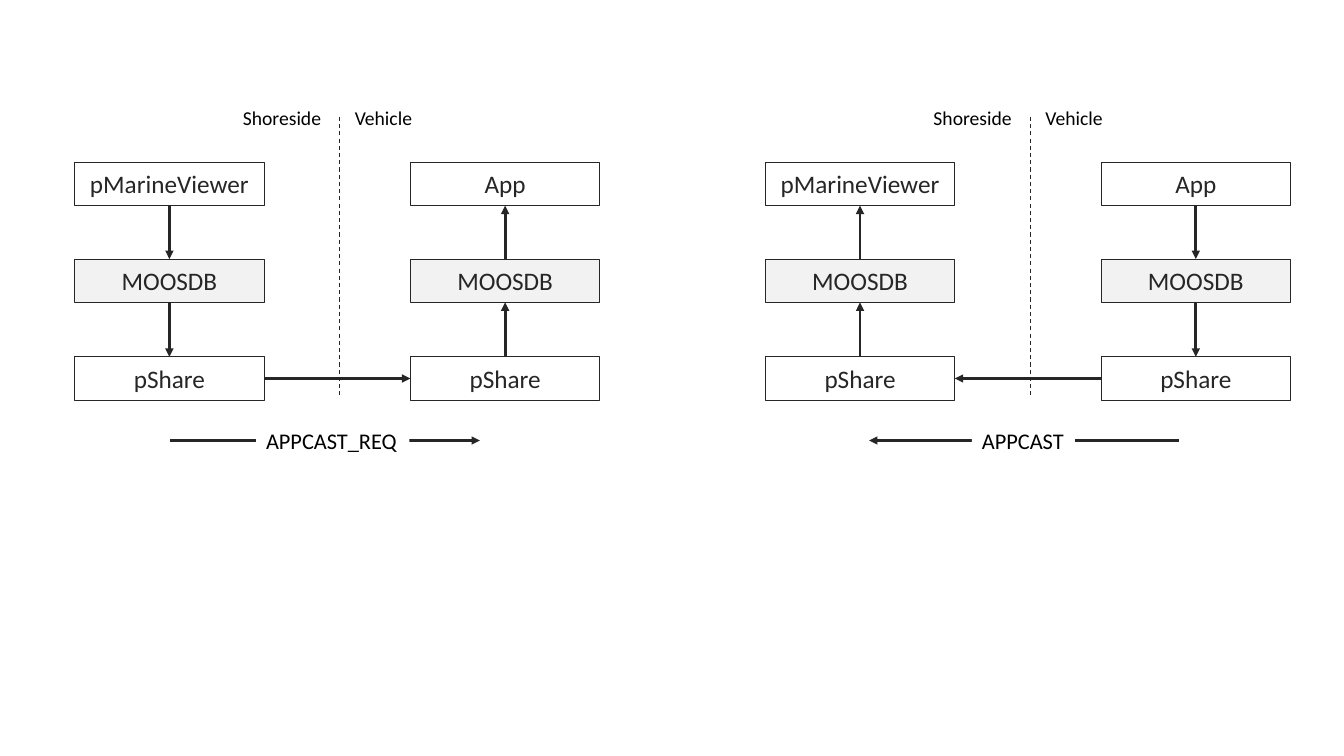
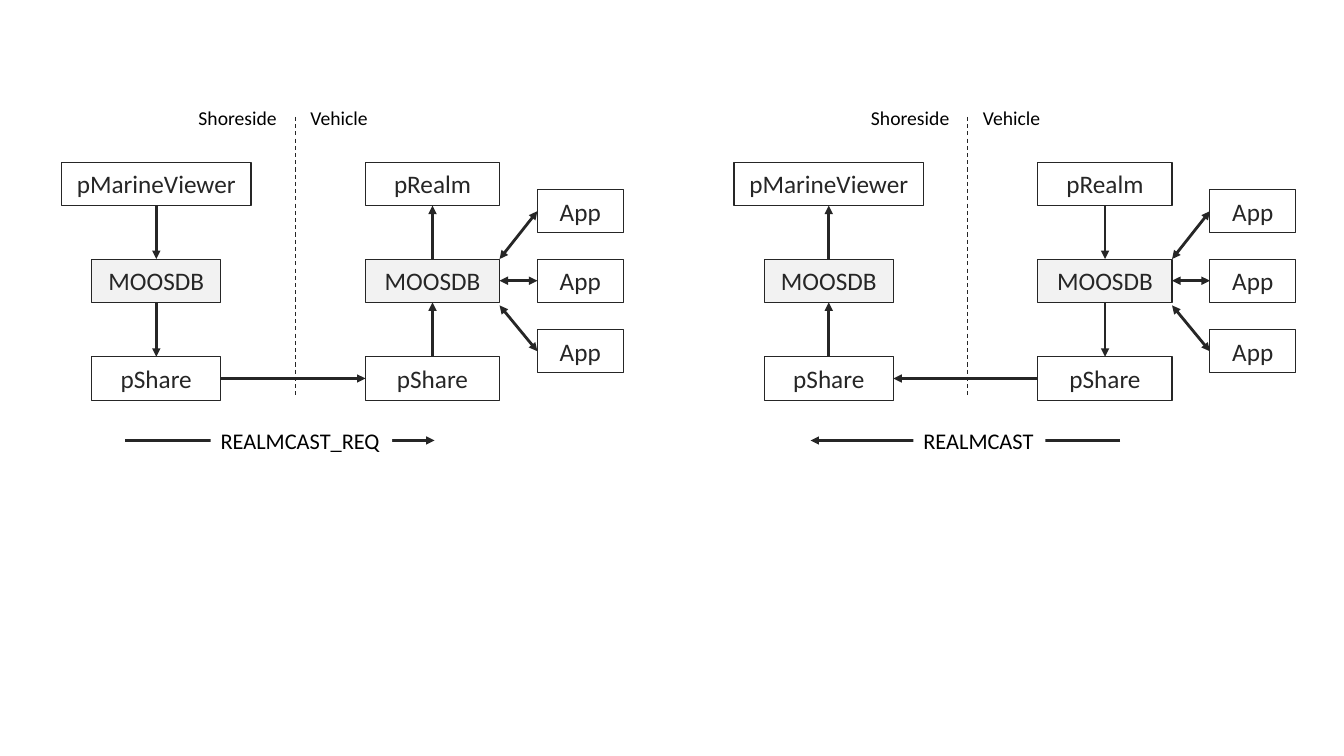
from pptx import Presentation
from pptx.dml.color import RGBColor
from pptx.enum.dml import MSO_LINE
from pptx.enum.shapes import MSO_CONNECTOR, MSO_SHAPE
from pptx.enum.text import MSO_ANCHOR, MSO_AUTO_SIZE, PP_ALIGN
from pptx.oxml.ns import qn
from pptx.util import Inches, Pt
from lxml import etree

INK = RGBColor(0x26, 0x26, 0x26)
BLACK = RGBColor(0, 0, 0)
GREY = RGBColor(0xF2, 0xF2, 0xF2)
WHITE = RGBColor(0xFF, 0xFF, 0xFF)
RECT = MSO_SHAPE.RECTANGLE
LINE = MSO_CONNECTOR.STRAIGHT
DASH = MSO_LINE.DASH
MIDDLE = MSO_ANCHOR.MIDDLE
CENTER = PP_ALIGN.CENTER
GROW = MSO_AUTO_SIZE.SHAPE_TO_FIT_TEXT
TOP, LEFT, BOTTOM, RIGHT = range(4)

ROWS = (1.61, 2.57, 3.54)
APPS = (1.88, 2.57, 3.27)
HEIGHT = 0.43
FLOW_Y = 4.37
FLOW_LEN = 3.07


class Deck:
    font = "Calibri"
    box_text = {"size": Pt(18), "color": INK}
    label_text = {"size": Pt(14), "color": BLACK}
    tag_text = {"size": Pt(16), "color": BLACK}

    def __init__(self):
        self.prs = Presentation()
        self.prs.slide_width = Inches(13.33)
        self.prs.slide_height = Inches(7.5)
        self.slide = None

    def page(self):
        self.slide = self.prs.slides.add_slide(self.prs.slide_layouts[6])

    def words(self, frame, text, style):
        para = frame.paragraphs[0]
        run = para.add_run()
        run.text = text
        run.font.color.rgb = style["color"]
        for key, value in {"name": self.font, "size": style["size"]}.items():
            setattr(run.font, key, value)
        return para

    def box(self, mid, top, width, text, fill=None):
        shape = self.slide.shapes.add_shape(
            RECT, Inches(mid - width / 2), Inches(top), Inches(width), Inches(HEIGHT))
        shape.shadow.inherit = False
        if fill is None:
            shape.fill.background()
        else:
            shape.fill.solid()
            shape.fill.fore_color.rgb = fill
        shape.line.color.rgb = INK
        shape.line.width = Pt(0.75)
        frame = shape.text_frame
        for key, value in {"vertical_anchor": MIDDLE, "word_wrap": True}.items():
            setattr(frame, key, value)
        self.words(frame, text, self.box_text).alignment = CENTER
        return shape

    def label(self, left, top, width, height, text, style, fill=None):
        shape = self.slide.shapes.add_textbox(
            Inches(left), Inches(top), Inches(width), Inches(height))
        if fill is not None:
            shape.fill.solid()
            shape.fill.fore_color.rgb = fill
        frame = shape.text_frame
        for key, value in {"word_wrap": False, "auto_size": GROW}.items():
            setattr(frame, key, value)
        self.words(frame, text, style)

    def line(self, start, end, weight=0, dash=None, heads=()):
        wire = self.slide.shapes.add_connector(
            LINE, *(Inches(value) for value in (*start, *end)))
        wire.line.color.rgb = INK
        wire.line.width = Pt(weight)
        if dash is not None:
            wire.line.dash_style = dash
        props = wire._element.spPr
        for head in heads:
            etree.SubElement(props.find(qn("a:ln")), qn("a:" + head), type="triangle")
        etree.SubElement(props, qn("a:effectLst"))
        return wire

    def link(self, start, side, end, port, heads=("tailEnd",)):
        wire = self.line((0, 0), (0, 0), heads=heads)
        wire.begin_connect(start, side)
        wire.end_connect(end, port)

    def flow(self, left, text, width, ahead):
        ends = [(left, FLOW_Y), (left + FLOW_LEN, FLOW_Y)]
        start, end = ends if ahead else ends[::-1]
        self.line(start, end, 1.5, heads=("tailEnd",))
        gap = 0.85 if ahead else 1.02
        self.label(left + gap, 4.19, width, 0.37, text, self.tag_text, WHITE)

    def stack(self, mid, names, widths):
        return [self.box(mid, top, width, name, GREY if name == "MOOSDB" else None)
                for top, name, width in zip(ROWS, names, widths)]

    def chain(self, boxes, down):
        for upper, lower in zip(boxes, boxes[1:]):
            if down:
                self.link(upper, BOTTOM, lower, TOP)
            else:
                self.link(lower, TOP, upper, BOTTOM)

    def apps(self, left, hub, edge):
        both = ("headEnd", "tailEnd")
        width = 0.85
        for top, tip in zip(APPS, (ROWS[1], None, 3.03)):
            app = self.box(left + width / 2, top, width, "App")
            if tip is None:
                self.link(hub, RIGHT, app, LEFT, both)
            else:
                wire = self.line((edge, tip), (left, top + HEIGHT / 2), heads=both)
                wire.end_connect(app, LEFT)

    def panel(self, axis, shore, craft, ahead, apps):
        self.line((axis, 1.16), (axis, 3.92), 0.75, DASH)
        self.label(axis - 1.06, 1, 0.99, 0.34, "Shoreside", self.label_text)
        self.label(axis + 0.05, 1, 0.78, 0.34, "Vehicle", self.label_text)
        near = self.stack(axis + shore["shift"], shore["names"], shore["widths"])
        far = self.stack(axis + craft["shift"], craft["names"], craft["widths"])
        self.chain(near, ahead)
        self.chain(far, not ahead)
        if ahead:
            self.link(near[2], RIGHT, far[2], LEFT)
        else:
            self.link(far[2], LEFT, near[2], RIGHT)
        if apps:
            edge = axis + craft["shift"] + craft["widths"][1] / 2
            self.apps(axis + 2.4, far[1], edge)


def column(shift, name, *widths):
    return {"shift": shift, "names": (name, "MOOSDB", "pShare"), "widths": widths}


PAGES = (
    {"shore": column(-1.69, "pMarineViewer", 1.88, 1.88, 1.88),
     "craft": column(1.64, "App", 1.88, 1.88, 1.88),
     "apps": False,
     "flows": ((3.37, 1.69, "APPCAST_REQ", 1.52, True),
               (10.22, 8.62, "APPCAST", 1.02, False))},
    {"shore": column(-1.38, "pMarineViewer", 1.88, 1.28, 1.28),
     "craft": column(1.36, "pRealm", 1.33, 1.33, 1.33),
     "apps": True,
     "flows": ((2.93, 1.24, "REALMCAST_REQ", 1.8, True),
               (9.6, 8.04, "REALMCAST", 1.31, False))},
)


def main():
    deck = Deck()
    for page in PAGES:
        deck.page()
        for axis, left, text, width, ahead in page["flows"]:
            deck.panel(axis, page["shore"], page["craft"], ahead, page["apps"])
            deck.flow(left, text, width, ahead)
    deck.prs.save("out.pptx")


if __name__ == "__main__":
    main()
